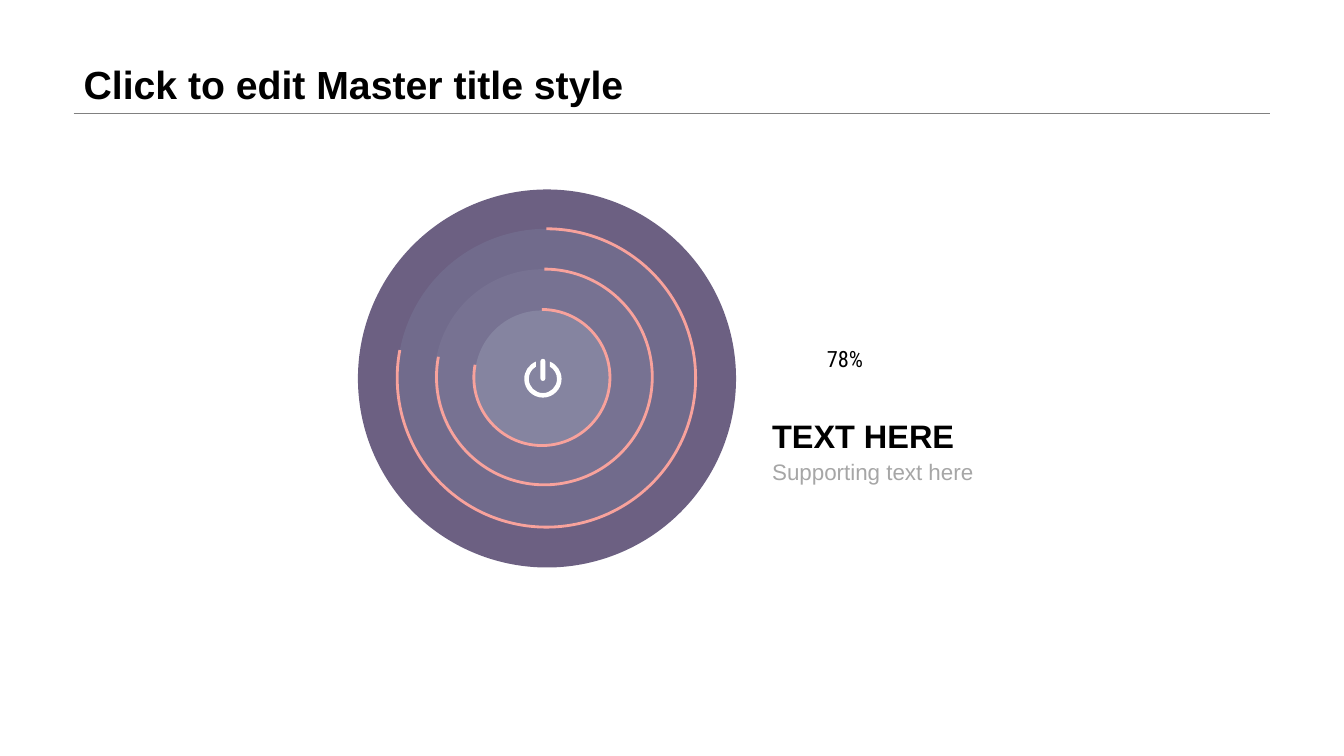
from math import asin, cos, pi, sin, tan

from lxml import etree
from pptx import Presentation
from pptx.dml.color import RGBColor
from pptx.enum.shapes import MSO_CONNECTOR, MSO_SHAPE
from pptx.enum.text import MSO_ANCHOR as ANCHOR, MSO_AUTO_SIZE, PP_ALIGN as ALIGN
from pptx.oxml.ns import qn
from pptx.util import Inches, Pt

BLACK = RGBColor(0x00, 0x00, 0x00)
WHITE = RGBColor(0xFF, 0xFF, 0xFF)
GREY = RGBColor(0x80, 0x80, 0x80)
LIGHT_GREY = RGBColor(0xA6, 0xA6, 0xA6)
CORAL = RGBColor(0xF8, 0xA2, 0x9C)

TITLE = "Click to edit Master title style"
PERCENT = 78

# left, top, diameter, colour
DISCS = [
    (3.55, 1.88, 3.75, RGBColor(0x6C, 0x60, 0x82)),
    (3.94, 2.27, 2.96, RGBColor(0x71, 0x6B, 0x8C)),
    (4.31, 2.67, 2.15, RGBColor(0x77, 0x72, 0x92)),
    (4.71, 3.08, 1.33, RGBColor(0x85, 0x84, 0xA0)),
]
# left, top, diameter
PROGRESS_ARCS = [(4.7, 3.07, 1.35), (4.33, 2.67, 2.14), (3.94, 2.27, 2.96)]

# text, box, margins, anchor, alignment, font
LABELS = [
    (f"{PERCENT}%", (7.91, 3.2, 0.94, 0.71), (0, 0), ANCHOR.MIDDLE, ALIGN.CENTER,
     {"name": "Roboto Condensed", "size": Pt(16)}, BLACK),
    ("Supporting text here", (7.56, 4.5, 2.22, 0.41), (0.1, 0.05), ANCHOR.TOP, ALIGN.LEFT,
     {"name": "Arial", "size": Pt(16)}, LIGHT_GREY),
    ("TEXT HERE", (7.56, 4.07, 2.22, 0.51), (0.1, 0.05), ANCHOR.MIDDLE, ALIGN.LEFT,
     {"name": "Arial", "size": Pt(23.2), "bold": True}, BLACK),
]

ICON_X, ICON_Y = 5.385, 3.76
RING_OUTER, RING_INNER, RING_GAP = 0.185, 0.14, 0.07
STEM_TOP, STEM_BOTTOM, STEM_RADIUS = 3.56, 3.78, 0.025


def inches(values):
    return [Inches(v) for v in values]


def write(tf, text, align, font, color):
    tf.word_wrap = True
    tf.auto_size = MSO_AUTO_SIZE.NONE
    p = tf.paragraphs[0]
    p.alignment = align
    r = p.add_run()
    r.text = text
    for name, value in font.items():
        setattr(r.font, name, value)
    r.font.color.rgb = color
    return p


def add_round(shapes, kind, left, top, diameter):
    sp = shapes.add_shape(kind, *inches((left, top, diameter, diameter)))
    sp.shadow.inherit = False
    return sp


def curve(y, radius, angles):
    """A start point, then three Bezier points per step between the angles.

    Angles run clockwise from the right; the centre lies on the icon's axis.
    """
    def place(a, along=0):
        return (Inches(ICON_X + radius * (cos(a) - along * sin(a))),
                Inches(y + radius * (sin(a) + along * cos(a))))

    points = [place(angles[0])]
    for a, b in zip(angles, angles[1:]):
        reach = 4 / 3 * tan((b - a) / 4)
        points += [place(a, reach), place(b, -reach), place(b)]
    return points


def ring_angles(radius):
    gap = asin(RING_GAP / radius)
    return [gap - pi / 2, 0, pi / 2, pi, 3 * pi / 2 - gap]


def bend(path, arcs):
    """Turn the points that follow each arc's start into Bezier curves."""
    nodes = iter([n for n in path if n.tag != qn("a:close")])
    for arc in arcs:
        next(nodes)
        for _ in range(len(arc) // 3):
            first, second, end = next(nodes), next(nodes), next(nodes)
            bezier = etree.Element(qn("a:cubicBezTo"))
            first.addprevious(bezier)
            for node in (first, second, end):
                bezier.append(node[0])
                path.remove(node)


def add_power_icon(shapes):
    ring = [curve(ICON_Y, RING_OUTER, ring_angles(RING_OUTER)),
            curve(ICON_Y, RING_INNER, ring_angles(RING_INNER)[::-1])]
    stem = [curve(STEM_TOP + STEM_RADIUS, STEM_RADIUS, [pi, 3 * pi / 2, 2 * pi]),
            curve(STEM_BOTTOM - STEM_RADIUS, STEM_RADIUS, [0, pi / 2, pi])]
    builder = shapes.build_freeform(*ring[0][0])
    builder.add_line_segments(ring[0][1:] + ring[1], close=True)
    builder.move_to(*stem[0][0])
    builder.add_line_segments(stem[0][1:] + stem[1], close=True)
    icon = builder.convert_to_shape()
    bend(next(icon.element.iter(qn("a:path"))), ring + stem)
    icon.shadow.inherit = False
    icon.fill.solid()
    icon.fill.fore_color.rgb = WHITE
    icon.line.fill.background()


def add_dial(shapes):
    for left, top, diameter, color in DISCS:
        disc = add_round(shapes, MSO_SHAPE.OVAL, left, top, diameter)
        disc.fill.solid()
        disc.fill.fore_color.rgb = color
        disc.line.fill.background()
    end_angle = (270 + 360 * PERCENT / 100) % 360
    for box in PROGRESS_ARCS:
        arc = add_round(shapes, MSO_SHAPE.ARC, *box)
        # An arc's adjustment counts 0.6 for each degree
        arc.adjustments[0] = 270 * 0.6
        arc.adjustments[1] = end_angle * 0.6
        arc.fill.background()
        arc.line.color.rgb = CORAL
        arc.line.width = Pt(2)
    add_power_icon(shapes)


def add_title(s):
    rule = s.shapes.add_connector(MSO_CONNECTOR.STRAIGHT, *inches((0.73, 1.12, 12.6, 1.12)))
    rule.line.color.rgb = GREY
    rule.line.width = Pt(0.25)
    etree.SubElement(rule.element.spPr, qn("a:effectLst"))

    title = s.shapes.title
    title.left, title.top, title.width, title.height = inches((0.73, 0, 11.87, 1.12))
    title.text_frame.vertical_anchor = ANCHOR.BOTTOM
    font = {"name": "Arial", "size": Pt(28), "bold": True}
    write(title.text_frame, TITLE, ALIGN.LEFT, font, BLACK).line_spacing = 0.9


def add_labels(shapes):
    for text, box, (side, edge), anchor, align, font, color in LABELS:
        tf = shapes.add_textbox(*inches(box)).text_frame
        tf.margin_left = tf.margin_right = Inches(side)
        tf.margin_top = tf.margin_bottom = Inches(edge)
        tf.vertical_anchor = anchor
        write(tf, text, align, font, color)


def main():
    prs = Presentation()
    prs.slide_width, prs.slide_height = inches((13.33, 7.5))
    s = prs.slides.add_slide(prs.slide_layouts[5])
    add_title(s)
    add_dial(s.shapes.add_group_shape().shapes)
    add_labels(s.shapes)
    prs.save("out.pptx")


if __name__ == "__main__":
    main()
